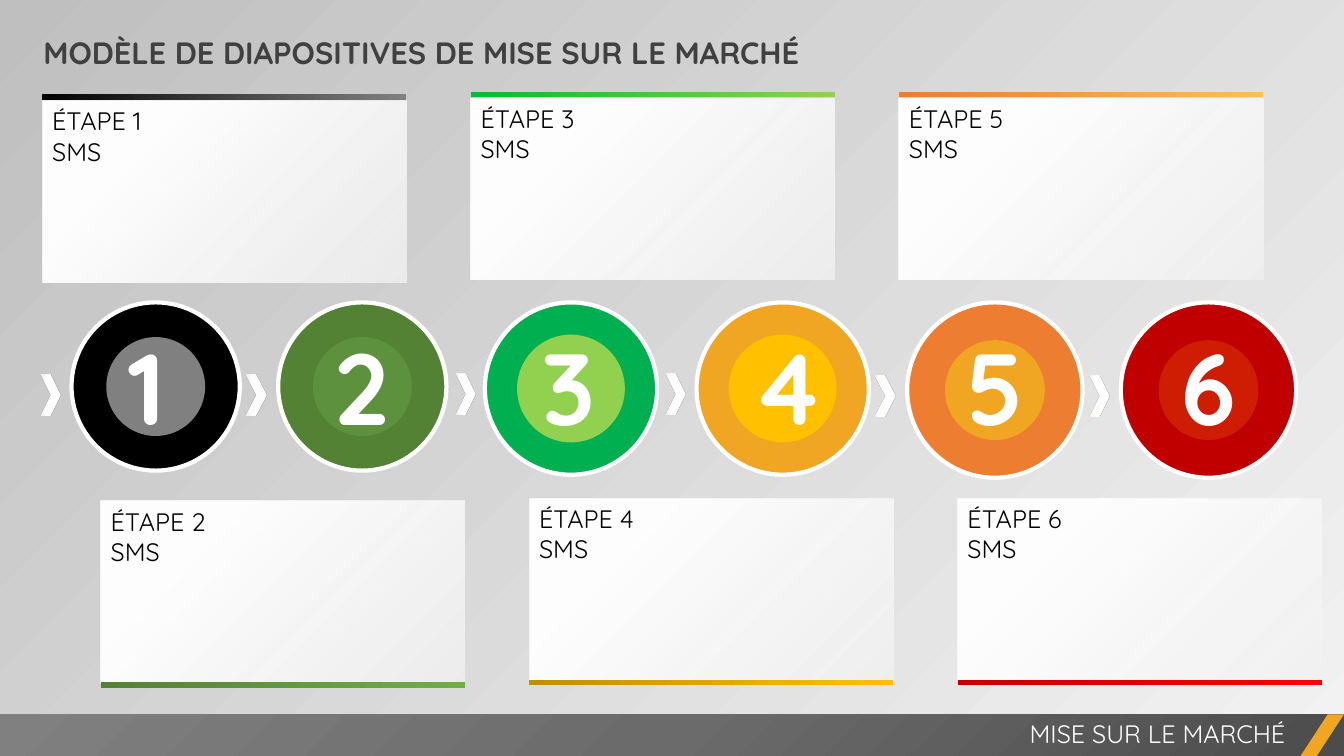
from dataclasses import dataclass

from pptx import Presentation
from pptx.dml.color import RGBColor
from pptx.enum.shapes import MSO_SHAPE
from pptx.enum.text import MSO_ANCHOR, MSO_AUTO_SIZE, PP_ALIGN
from pptx.oxml import parse_xml
from pptx.oxml.ns import nsdecls, qn
from pptx.util import Pt

CHEVRON, OVAL = MSO_SHAPE.CHEVRON, MSO_SHAPE.OVAL
RECTANGLE, ROUNDED = MSO_SHAPE.RECTANGLE, MSO_SHAPE.ROUNDED_RECTANGLE
SLANT = MSO_SHAPE.PARALLELOGRAM
TOP, LEFT, RIGHT = MSO_ANCHOR.TOP, PP_ALIGN.LEFT, PP_ALIGN.RIGHT
FIT_SHAPE = MSO_AUTO_SIZE.SHAPE_TO_FIT_TEXT

FONT = "Quicksand"
WHITE = RGBColor(0xFF, 0xFF, 0xFF)
BLACK = RGBColor(0x00, 0x00, 0x00)
CHARCOAL = RGBColor(0x40, 0x40, 0x40)
SMOKE = RGBColor(0x4C, 0x4C, 0x4C)
SLATE = RGBColor(0x6B, 0x6B, 0x6B)
GREY = RGBColor(0x80, 0x80, 0x80)
SILVER = RGBColor(0xBF, 0xBF, 0xBF)
PALE = RGBColor(0xF2, 0xF2, 0xF2)
FOREST = RGBColor(0x54, 0x82, 0x35)
MOSS = RGBColor(0x5E, 0x91, 0x3E)
LEAF = RGBColor(0x70, 0xAD, 0x47)
GREEN = RGBColor(0x00, 0xB0, 0x50)
EMERALD = RGBColor(0x00, 0xBD, 0x32)
LIME = RGBColor(0x92, 0xD0, 0x50)
AMBER = RGBColor(0xF0, 0xA6, 0x22)
GOLD = RGBColor(0xFF, 0xC0, 0x00)
BRONZE = RGBColor(0xBF, 0x90, 0x00)
ORANGE = RGBColor(0xED, 0x7D, 0x31)
APRICOT = RGBColor(0xF9, 0xC0, 0x53)
CRIMSON = RGBColor(0xC0, 0x00, 0x00)
BRICK = RGBColor(0xCE, 0x1D, 0x02)
RED = RGBColor(0xFF, 0x00, 0x00)

LINEAR = '<a:lin ang="{}" scaled="0"/>'
CORNER = '<a:path path="circle"><a:fillToRect l="100000" t="100000"/></a:path>'


@dataclass
class Stage:
    """Colours and horizontal places of one numbered stage."""

    ring: RGBColor
    core: RGBColor
    bar: tuple
    ring_left: float
    ring_size: float
    core_size: float
    chevron_left: float
    chevron_top: float
    number_left: float
    number_width: float
    card_top: float


STAGES = [
    Stage(BLACK, GREY, (BLACK, GREY), 51.1, 120.2, 70.6, 28.8, 267.8, 85, 51.8, 72),
    Stage(FOREST, MOSS, (FOREST, LEAF), 198.7, 120.2, 70.6, 175.7, 267.8, 231.8, 66.2, 357.8),
    Stage(GREEN, LIME, (EMERALD, LIME), 346.3, 123.1, 77, 325.4, 267.1, 380.2, 66.2, 70.3),
    Stage(AMBER, GOLD, (BRONZE, GOLD), 497.5, 123.1, 77, 475.2, 267.1, 530.6, 66.2, 355.9),
    Stage(ORANGE, AMBER, (ORANGE, APRICOT), 648, 125.3, 71.3, 625, 268.6, 683.3, 66.2, 70.3),
    Stage(CRIMSON, BRICK, (CRIMSON, RED), 800.6, 125.3, 71.3, 778.3, 268.6, 836.6, 66.2, 355.9),
]


def set_gradient(fill, properties, stops, direction):
    """Fill with (position, colour, opacity) stops along the given direction."""
    fill.gradient()
    stop_xml = "".join(
        f'<a:gs pos="{position * 1000}"><a:srgbClr val="{colour}">'
        f'<a:alpha val="{opacity * 1000}"/></a:srgbClr></a:gs>'
        for position, colour, opacity in stops
    )
    gradient = parse_xml(
        f'<a:gradFill {nsdecls("a")} rotWithShape="1">'
        f"<a:gsLst>{stop_xml}</a:gsLst>{direction}</a:gradFill>"
    )
    properties.replace(properties.find(qn("a:gradFill")), gradient)


def linear(degrees):
    """Return a linear direction, clockwise from left to right."""
    return LINEAR.format(degrees * 60000)


def add_plain(shapes, preset, left, top, width, height, colour=None):
    """Add a shape without outline or shadow."""
    shape = shapes.add_shape(preset, Pt(left), Pt(top), Pt(width), Pt(height))
    shape.shadow.inherit = False
    shape.line.fill.background()
    if colour is not None:
        shape.fill.solid()
        shape.fill.fore_color.rgb = colour
    return shape


def write(frame, text, size, colour, bold=False, align=LEFT):
    """Write top-anchored text in the slide font."""
    frame.text = text
    frame.word_wrap = True
    frame.vertical_anchor = TOP
    for paragraph in frame.paragraphs:
        paragraph.alignment = align
        for run in paragraph.runs:
            run.font.name = FONT
            run.font.size = Pt(size)
            run.font.bold = bold
            run.font.color.rgb = colour


def add_label(shapes, left, top, width, height, *text_style, **options):
    """Add a text box that grows with its text."""
    label = shapes.add_textbox(Pt(left), Pt(top), Pt(width), Pt(height))
    write(label.text_frame, *text_style, **options)
    label.text_frame.auto_size = FIT_SHAPE


def add_title(slide, left, top, width, height):
    """Place and format the slide title."""
    title = slide.shapes.title
    title.left, title.top, title.width, title.height = map(Pt, (left, top, width, height))
    write(title.text_frame, "MODÈLE DE DIAPOSITIVES DE MISE SUR LE MARCHÉ", 22, CHARCOAL, bold=True)
    title.text_frame.auto_size = FIT_SHAPE


def add_footer(shapes, left, top, width, height):
    """Draw the footer band with its slanted accent and caption."""
    band = add_plain(shapes, RECTANGLE, left, top, width, height)
    stops = [(0, SMOKE, 100), (50, SLATE, 100), (100, GREY, 100)]
    set_gradient(band.fill, band.element.spPr, stops, CORNER)
    accent = add_plain(shapes, SLANT, left + width - 31, top, 31, height, AMBER)
    accent.adjustments[0] = 0.652
    add_label(shapes, left + 378, top - 0.7, 547.2, 29, "MISE SUR LE MARCHÉ", 18, WHITE, align=RIGHT)


def add_card(shapes, number, bar_colours, left, top, width, height):
    """Draw a step card with its bar above (odd) or below (even)."""
    card = add_plain(shapes, ROUNDED, left, top, width, height)
    card.adjustments[0] = 0
    set_gradient(card.fill, card.element.spPr, [(0, PALE, 80), (74, WHITE, 100)], linear(225))
    write(card.text_frame, f"ÉTAPE {number}\nSMS", 18, BLACK)
    bar_top = top - 4.5 if number % 2 else top + height
    bar = add_plain(shapes, ROUNDED, left, bar_top, width, 3.8)
    bar.adjustments[0] = 0
    start, end = bar_colours
    set_gradient(bar.fill, bar.element.spPr, [(0, start, 100), (100, end, 100)], linear(0))


def add_stage(shapes, number, stage, top):
    """Draw the chevron, the two discs and the number of a stage."""
    chevron = add_plain(shapes, CHEVRON, stage.chevron_left, stage.chevron_top, 14.4, 28.8)
    set_gradient(chevron.fill, chevron.element.spPr, [(0, WHITE, 62), (31, WHITE, 100)], linear(0))
    discs = shapes.add_group_shape().shapes
    size, inset = stage.ring_size, (stage.ring_size - stage.core_size) / 2
    ring = add_plain(discs, OVAL, stage.ring_left, top, size, size, stage.ring)
    ring.line.color.rgb = WHITE
    ring.line.width = Pt(3)
    add_plain(discs, OVAL, stage.ring_left + inset, top + inset, stage.core_size, stage.core_size, stage.core)
    add_label(shapes, stage.number_left, top + 12.2, stage.number_width, 94.3, str(number), 72, WHITE, bold=True)


def build_launch_slide(presentation):
    """Build the six-step market launch slide."""
    slide = presentation.slides.add_slide(presentation.slide_layouts[5])
    fill = slide.background.fill
    fill.solid()
    background = slide.element.find(".//" + qn("p:bgPr"))
    set_gradient(fill, background, [(0, PALE, 40), (100, SILVER, 100)], linear(225))
    add_title(slide, 23.8, 20.2, 620, 33.8)
    add_footer(slide.shapes, 0, 510.3, 960, 29.7)
    for number, stage in enumerate(STAGES, 1):
        column, lower = divmod(number - 1, 2)
        card_left = 30.2 + 306 * column + 41.8 * lower
        add_card(slide.shapes, number, stage.bar, card_left, stage.card_top, 260, 129.6)
        add_stage(slide.shapes, number, stage, 216)


def main():
    """Create and save the presentation."""
    presentation = Presentation()
    presentation.slide_width, presentation.slide_height = Pt(960), Pt(540)
    build_launch_slide(presentation)
    presentation.save("out.pptx")


if __name__ == "__main__":
    main()
